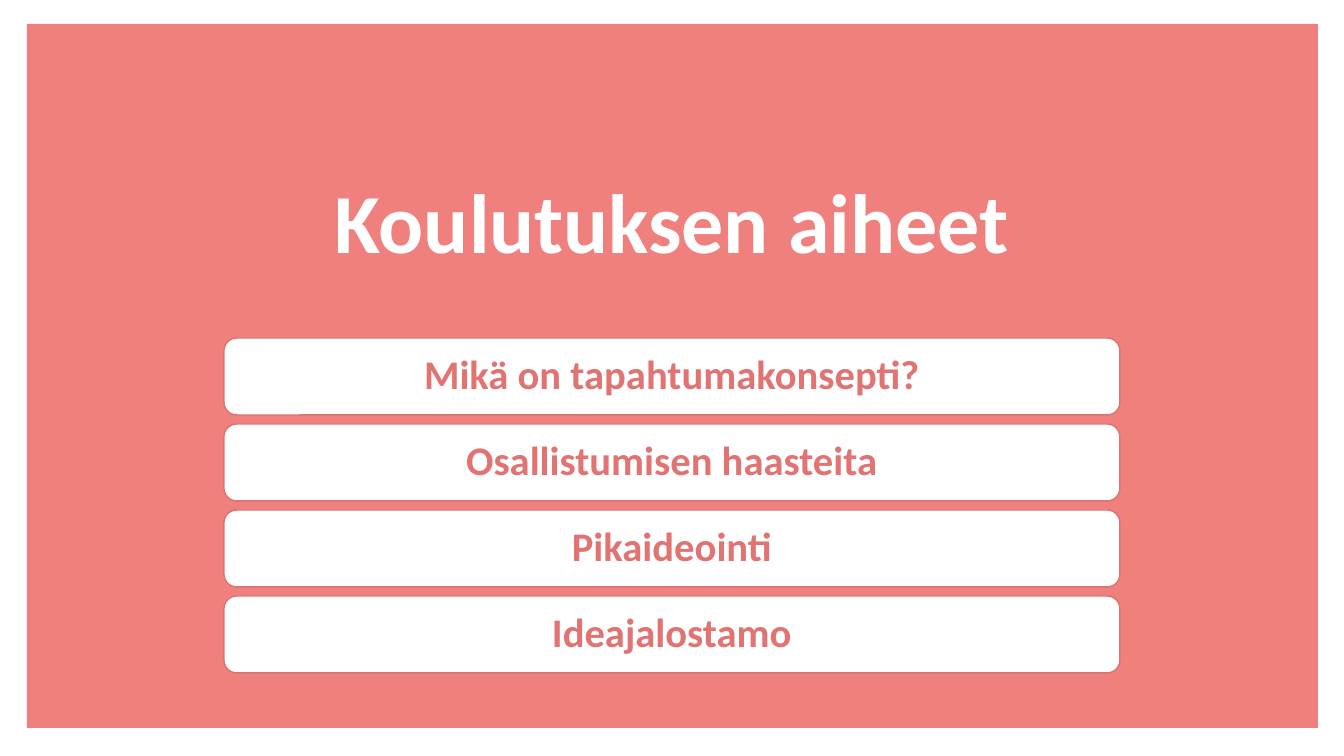
from dataclasses import dataclass

import pptx
import pptx.dml.color
import pptx.enum.shapes
import pptx.enum.text
import pptx.shapes.autoshape
import pptx.slide
import pptx.util

EMU_PER_PX = 914400 / 100.8


@dataclass(frozen=True)
class Theme:
    font: str = "Calibri"
    coral: str = "EF807D"
    white: str = "FFFFFF"
    topic_text: str = "E27373"
    topic_border: str = "D97471"
    title_size: int = 60
    topic_size: int = 29
    border_width: int = 1
    line_spacing: float = 0.9


@dataclass(frozen=True)
class Box:
    left: int
    top: int
    width: int
    height: int

    def emu(self) -> tuple[pptx.util.Emu, ...]:
        return tuple(px(n) for n in (self.left, self.top, self.width, self.height))


@dataclass(frozen=True)
class Topic:
    label: str
    box: Box


THEME = Theme()
SLIDE = Box(0, 0, 1344, 756)
PANEL = Box(27, 24, 1291, 704)
TITLE = Box(26, 118, 1291, 217)
FIRST_TOPIC = Box(224, 338, 896, 77)
TOPIC_PITCH = 86
TOPIC_INSET = 16
TOPIC_LABELS = (
    "Mikä on tapahtumakonsepti?",
    "Osallistumisen haasteita",
    "Pikaideointi",
    "Ideajalostamo",
)
TOPICS = [
    Topic(
        label,
        Box(
            FIRST_TOPIC.left,
            FIRST_TOPIC.top + row * TOPIC_PITCH,
            FIRST_TOPIC.width,
            FIRST_TOPIC.height,
        ),
    )
    for row, label in enumerate(TOPIC_LABELS)
]


def px(length: int) -> pptx.util.Emu:
    return pptx.util.Emu(round(length * EMU_PER_PX))


def rgb(colour: str) -> pptx.dml.color.RGBColor:
    return pptx.dml.color.RGBColor.from_string(colour)


def write(
    holder: pptx.shapes.autoshape.Shape, words: str, size: int, colour: str, inset: int
) -> None:
    frame = holder.text_frame
    frame.word_wrap = True
    frame.vertical_anchor = pptx.enum.text.MSO_ANCHOR.MIDDLE
    frame.margin_left = frame.margin_right = px(inset)
    frame.margin_top = frame.margin_bottom = px(inset)
    paragraph = frame.paragraphs[0]
    paragraph.alignment = pptx.enum.text.PP_ALIGN.CENTER
    paragraph.line_spacing = THEME.line_spacing
    run = paragraph.add_run()
    run.text = words
    run.font.name = THEME.font
    run.font.size = pptx.util.Pt(size)
    run.font.bold = True
    run.font.color.rgb = rgb(colour)


def draw_panel(slide: pptx.slide.Slide) -> None:
    panel = slide.shapes.add_shape(
        pptx.enum.shapes.MSO_SHAPE.RECTANGLE, *PANEL.emu()
    )
    panel.shadow.inherit = False
    panel.fill.solid()
    panel.fill.fore_color.rgb = rgb(THEME.coral)
    panel.line.fill.background()


def draw_title(slide: pptx.slide.Slide) -> None:
    title = slide.shapes.add_textbox(*TITLE.emu())
    write(title, "Koulutuksen aiheet", THEME.title_size, THEME.white, 5)


def draw_topic(slide: pptx.slide.Slide, topic: Topic) -> None:
    card = slide.shapes.add_shape(
        pptx.enum.shapes.MSO_SHAPE.ROUNDED_RECTANGLE, *topic.box.emu()
    )
    card.shadow.inherit = False
    card.fill.solid()
    card.fill.fore_color.rgb = rgb(THEME.white)
    card.line.color.rgb = rgb(THEME.topic_border)
    card.line.width = pptx.util.Pt(THEME.border_width)
    write(card, topic.label, THEME.topic_size, THEME.topic_text, TOPIC_INSET)


def main() -> None:
    deck = pptx.Presentation()
    deck.slide_width = px(SLIDE.width)
    deck.slide_height = px(SLIDE.height)
    slide = deck.slides.add_slide(deck.slide_layouts[6])
    draw_panel(slide)
    draw_title(slide)
    for topic in TOPICS:
        draw_topic(slide, topic)
    deck.save("out.pptx")


if __name__ == "__main__":
    main()
